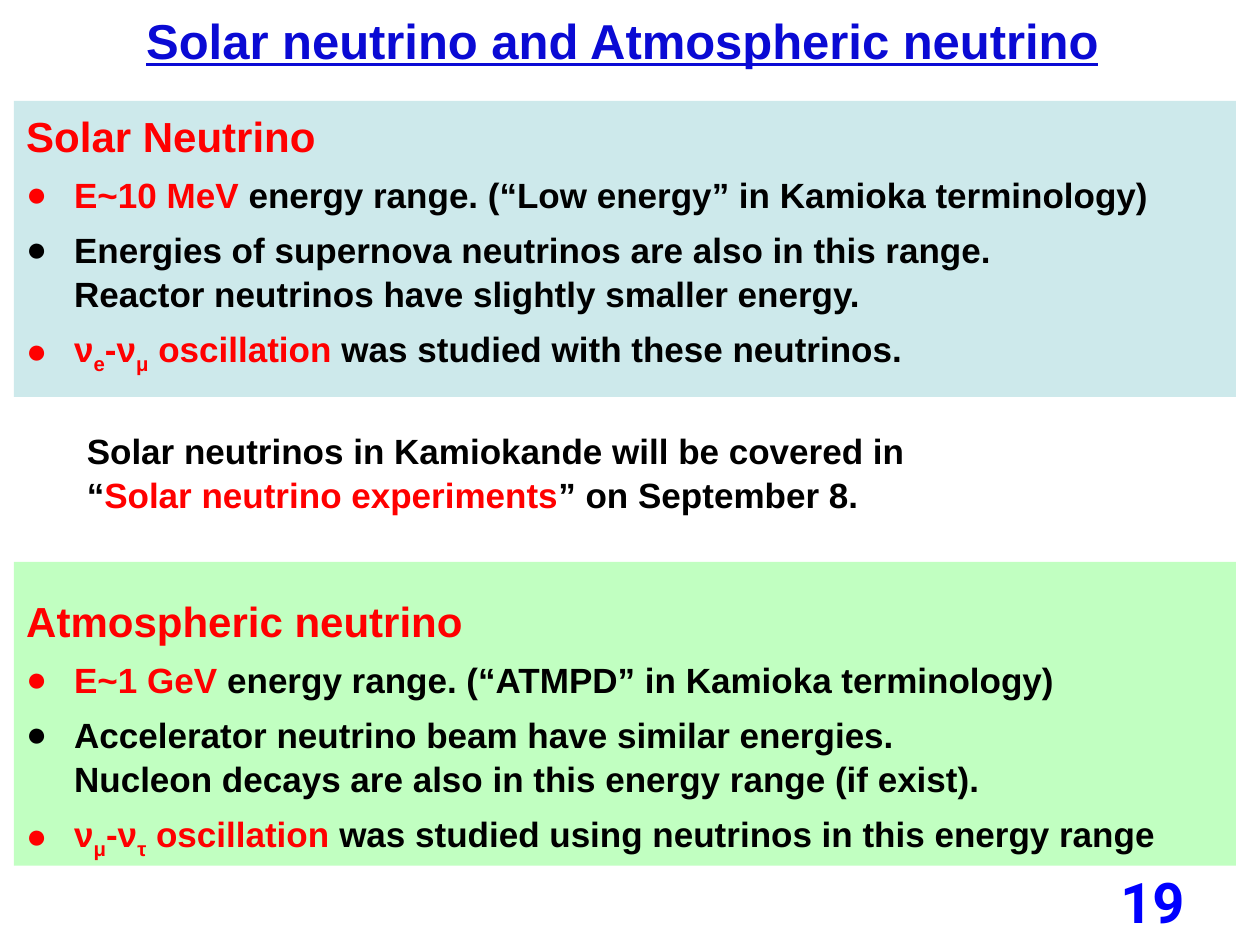
from pptx import Presentation
from pptx.dml.color import RGBColor
from pptx.enum import shapes, text
from pptx.oxml import xmlchemy
from pptx.oxml.ns import qn
from pptx.util import Inches, Pt
from lxml import etree

RED = RGBColor(0xFF, 0x00, 0x00)
BLACK = RGBColor(0x00, 0x00, 0x00)
TITLE_BLUE = RGBColor(0x0A, 0x0A, 0xD4)
NUMBER_BLUE = RGBColor(0x00, 0x00, 0xFF)
PALE_BLUE = RGBColor(0xCD, 0xE9, 0xEB)
PALE_GREEN = RGBColor(0xC1, 0xFF, 0xC1)

SUBSCRIPT = "-25000"
LINE_SPACING = 1.05

SOLAR_POINTS = [
    [("E~10 MeV ", RED),
     ("energy range. (“Low energy” in Kamioka terminology)", BLACK)],
    [("Energies of supernova neutrinos are also in this range.\n"
      "Reactor neutrinos have slightly smaller energy.", BLACK)],
    [("ν", RED), ("e", RED, SUBSCRIPT), ("-ν", RED), ("μ", RED, SUBSCRIPT),
     (" oscillation ", RED), ("was studied with these neutrinos.", BLACK)],
]
ATMOSPHERIC_POINTS = [
    [("E~1 GeV ", RED),
     ("energy range. (“ATMPD” in Kamioka terminology)", BLACK)],
    [("Accelerator neutrino beam have similar energies.\n"
      "Nucleon decays are also in this energy range (if exist).", BLACK)],
    [("ν", RED), ("μ", RED, SUBSCRIPT), ("-ν", RED), ("τ", RED, SUBSCRIPT),
     (" oscillation ", RED),
     ("was studied using neutrinos in this energy range", BLACK)],
]
LECTURE_NOTE = [
    ("Solar neutrinos in Kamiokande will be covered in\n“", BLACK),
    ("Solar neutrino experiments", RED),
    ("” on September 8.", BLACK),
]


def place(shape, left, top, width, height):
    shape.left, shape.top = Inches(left), Inches(top)
    shape.width, shape.height = Inches(width), Inches(height)


def add_run(paragraph, words, color, size, baseline=None, font="Arial"):
    for index, line in enumerate(words.split("\n")):
        if index:
            paragraph.add_line_break()
        run = paragraph.add_run()
        run.text = line
        run.font.name = font
        run.font.size = Pt(size)
        run.font.bold = True
        run.font.color.rgb = color
        if baseline:
            run.font._element.set("baseline", baseline)


def add_runs(paragraph, runs, size=20):
    paragraph.line_spacing = LINE_SPACING
    for words, color, *baseline in runs:
        add_run(paragraph, words, color, size, *baseline)


def make_bullet(paragraph):
    properties = paragraph._p.get_or_add_pPr()
    properties.set("marL", str(Inches(0.38)))
    properties.set("indent", str(-Inches(0.38)))
    etree.SubElement(properties, qn("a:buFont")).set("typeface", "Arial")
    etree.SubElement(properties, qn("a:buChar")).set("char", "●")


def add_text_box(slide, left, top, width, height):
    box = slide.shapes.add_textbox(
        Inches(left), Inches(top), Inches(width), Inches(height))
    box.text_frame.word_wrap = True
    return box.text_frame


def add_panel(slide, top, height, color):
    panel = slide.shapes.add_shape(
        shapes.MSO_SHAPE.RECTANGLE,
        Inches(0.11), Inches(top), Inches(9.7), Inches(height))
    panel.shadow.inherit = False
    panel.fill.solid()
    panel.fill.fore_color.rgb = color
    panel.line.fill.background()


def add_section(slide, top, heading, points):
    frame = add_text_box(slide, 0.11, top, 9.81, 2.2)
    paragraph = frame.paragraphs[0]
    add_runs(paragraph, [(heading, RED)], 24)
    paragraph.space_after = Pt(6)
    for point in points:
        paragraph = frame.add_paragraph()
        make_bullet(paragraph)
        add_runs(paragraph, point)
        paragraph.space_after = Pt(6)


def set_title(slide, words):
    title = slide.shapes.title
    place(title, 0.57, 0.01, 8.74, 0.57)
    title.text_frame.vertical_anchor = text.MSO_ANCHOR.TOP
    paragraph = title.text_frame.paragraphs[0]
    paragraph.alignment = text.PP_ALIGN.CENTER
    add_runs(paragraph, [(words, TITLE_BLUE)], 28)
    paragraph.runs[0].font.underline = True


def add_page_number(slide, number):
    frame = add_text_box(slide, 7.17, 6.95, 2.33, 0.4)
    frame.vertical_anchor = text.MSO_ANCHOR.MIDDLE
    paragraph = frame.paragraphs[0]
    paragraph.alignment = text.PP_ALIGN.RIGHT
    add_run(paragraph, number, NUMBER_BLUE, 32, font="Roboto")


def main():
    presentation = Presentation()
    presentation.slide_width = Inches(10)
    presentation.slide_height = Inches(7.5)
    slide = presentation.slides.add_slide(presentation.slide_layouts[5])
    set_title(slide, "Solar neutrino and Atmospheric neutrino")
    add_panel(slide, 0.8, 2.35, PALE_BLUE)
    add_panel(slide, 4.46, 2.41, PALE_GREEN)
    add_section(slide, 0.81, "Solar Neutrino", SOLAR_POINTS)
    add_section(slide, 4.66, "Atmospheric neutrino", ATMOSPHERIC_POINTS)
    note = add_text_box(slide, 0.59, 3.34, 7.78, 0.77)
    add_runs(note.paragraphs[0], LECTURE_NOTE)
    add_page_number(slide, "19")
    presentation.save("out.pptx")


if __name__ == "__main__":
    main()
